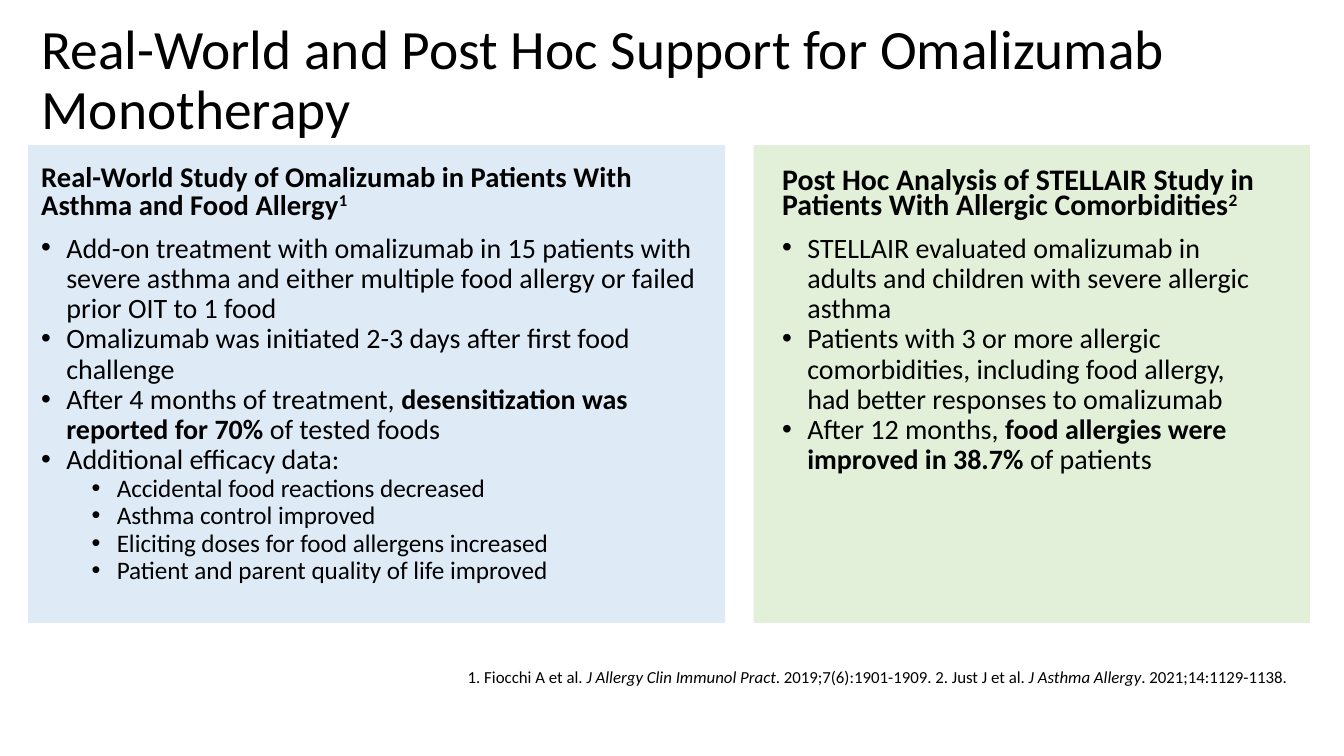
import pptx
import pptx.dml.color
import pptx.enum.shapes
import pptx.enum.text
import pptx.util
from lxml import etree
from pptx.oxml.ns import qn

Pt = pptx.util.Pt
Anchor = pptx.enum.text.MSO_ANCHOR

FONT = "Calibri"
COLORS = {"text": "000000", "study": "DEEBF7", "analysis": "E2F0D9"}
BULLET_HANG = 13.5
LEVEL_INDENT = 27

STUDY_HEADING = [("Real-World Study of Omalizumab in Patients With Asthma and Food Allergy", "b"),
                 ("1", "b^")]
STUDY_POINTS = [
    (0, [("Add-on treatment with omalizumab in 15 patients with severe asthma and either "
          "multiple food allergy or failed prior OIT to 1 food", "")]),
    (0, [("Omalizumab was initiated 2-3 days after first food challenge", "")]),
    (0, [("After 4 months of treatment, ", ""),
         ("desensitization was reported for 70% ", "b"), ("of tested foods", "")]),
    (0, [("Additional efficacy data:", "")]),
    (1, [("Accidental food reactions decreased", "")]),
    (1, [("Asthma control improved", "")]),
    (1, [("Eliciting doses for food allergens increased", "")]),
    (1, [("Patient and parent quality of life improved", "")]),
]
ANALYSIS_HEADING = [("Post Hoc Analysis of STELLAIR Study in Patients With Allergic Comorbidities", "b"),
                    ("2", "b^")]
ANALYSIS_POINTS = [
    (0, [("STELLAIR evaluated omalizumab in adults and children with severe allergic asthma", "")]),
    (0, [("Patients with 3 or more allergic comorbidities, including food allergy, "
          "had better responses to omalizumab", "")]),
    (0, [("After 12 months, ", ""),
         ("food allergies were improved in 38.7% ", "b"), ("of patients", "")]),
]
CITATIONS = [("1. Fiocchi A et al. ", ""), ("J Allergy Clin Immunol Pract", "i"),
             (". 2019;7(6):1901-1909. 2. Just J et al. ", ""), ("J Asthma Allergy", "i"),
             (". 2021;14:1129-1138.", "")]


def color(name):
    return pptx.dml.color.RGBColor.from_string(COLORS[name])


def place(shape, box):
    shape.left, shape.top, shape.width, shape.height = (Pt(length) for length in box)


def add_bullet(paragraph, level):
    properties = paragraph._p.get_or_add_pPr()
    properties.set("marL", str(Pt(BULLET_HANG + level * LEVEL_INDENT)))
    properties.set("indent", str(-Pt(BULLET_HANG)))
    font = etree.SubElement(properties, qn("a:buFont"))
    font.set("typeface", "Arial")
    etree.SubElement(properties, qn("a:buChar")).set("char", "•")


def write_text(frame, paragraphs, sizes, line_spacing=0.9, anchor=Anchor.TOP, bullets=False):
    frame.word_wrap = True
    frame.auto_size = pptx.enum.text.MSO_AUTO_SIZE.NONE
    frame.vertical_anchor = anchor
    for index, (level, runs) in enumerate(paragraphs):
        paragraph = frame.paragraphs[0] if index == 0 else frame.add_paragraph()
        paragraph.level = level
        paragraph.alignment = pptx.enum.text.PP_ALIGN.LEFT
        paragraph.line_spacing = line_spacing
        paragraph.space_before = Pt(0)
        if bullets:
            add_bullet(paragraph, level)
        for text, style in runs:
            run = paragraph.add_run()
            run.text = text
            run.font.name = FONT
            run.font.size = Pt(sizes[level])
            run.font.bold = "b" in style
            run.font.italic = "i" in style
            run.font.color.rgb = color("text")
            if "^" in style:
                run._r.get_or_add_rPr().set("baseline", "30000")


def add_text(slide, box, paragraphs, sizes, **text_format):
    textbox = slide.shapes.add_textbox(*(Pt(length) for length in box))
    write_text(textbox.text_frame, paragraphs, sizes, **text_format)


def add_title(slide, box, title):
    place(slide.shapes.title, box)
    write_text(slide.shapes.title.text_frame, [(0, [(title, "")])], [29.7], anchor=Anchor.MIDDLE)


def add_panel(slide, box, fill, heading, points, text_inset, heading_width, points_width,
              heading_size, heading_spacing):
    left, top, width, height = box
    panel = slide.shapes.add_shape(pptx.enum.shapes.MSO_SHAPE.RECTANGLE,
                                   *(Pt(length) for length in box))
    panel.shadow.inherit = False
    panel.fill.solid()
    panel.fill.fore_color.rgb = color(fill)
    panel.line.fill.background()
    text_left = left + text_inset
    heading_top, heading_height = top + 6.5, 37.5
    add_text(slide, (text_left, heading_top, heading_width, heading_height), [(0, heading)],
             [heading_size], line_spacing=heading_spacing, anchor=Anchor.BOTTOM)
    points_top = heading_top + heading_height
    add_text(slide, (text_left, points_top, points_width, top + height - points_top),
             points, [15, 13.5], bullets=True)


def add_citations(slide, box):
    add_text(slide, box, [(0, CITATIONS)], [9])


def main():
    presentation = pptx.Presentation()
    presentation.slide_width, presentation.slide_height = Pt(720), Pt(405)
    slide = presentation.slides.add_slide(presentation.slide_layouts[5])
    add_title(slide, (15, 10, 690, 67.5),
              "Real-World and Post Hoc Support for Omalizumab Monotherapy")
    add_panel(slide, (15, 77.75, 373.5, 256), "study", STUDY_HEADING, STUDY_POINTS,
              text_inset=0, heading_width=365, points_width=365,
              heading_size=15.3, heading_spacing=0.8)
    add_panel(slide, (403.75, 77.75, 298, 256), "analysis", ANALYSIS_HEADING, ANALYSIS_POINTS,
              text_inset=8.25, heading_width=293, points_width=273.5,
              heading_size=16, heading_spacing=0.7)
    add_citations(slide, (243.5, 355, 476.5, 43))
    presentation.save("out.pptx")


if __name__ == "__main__":
    main()
